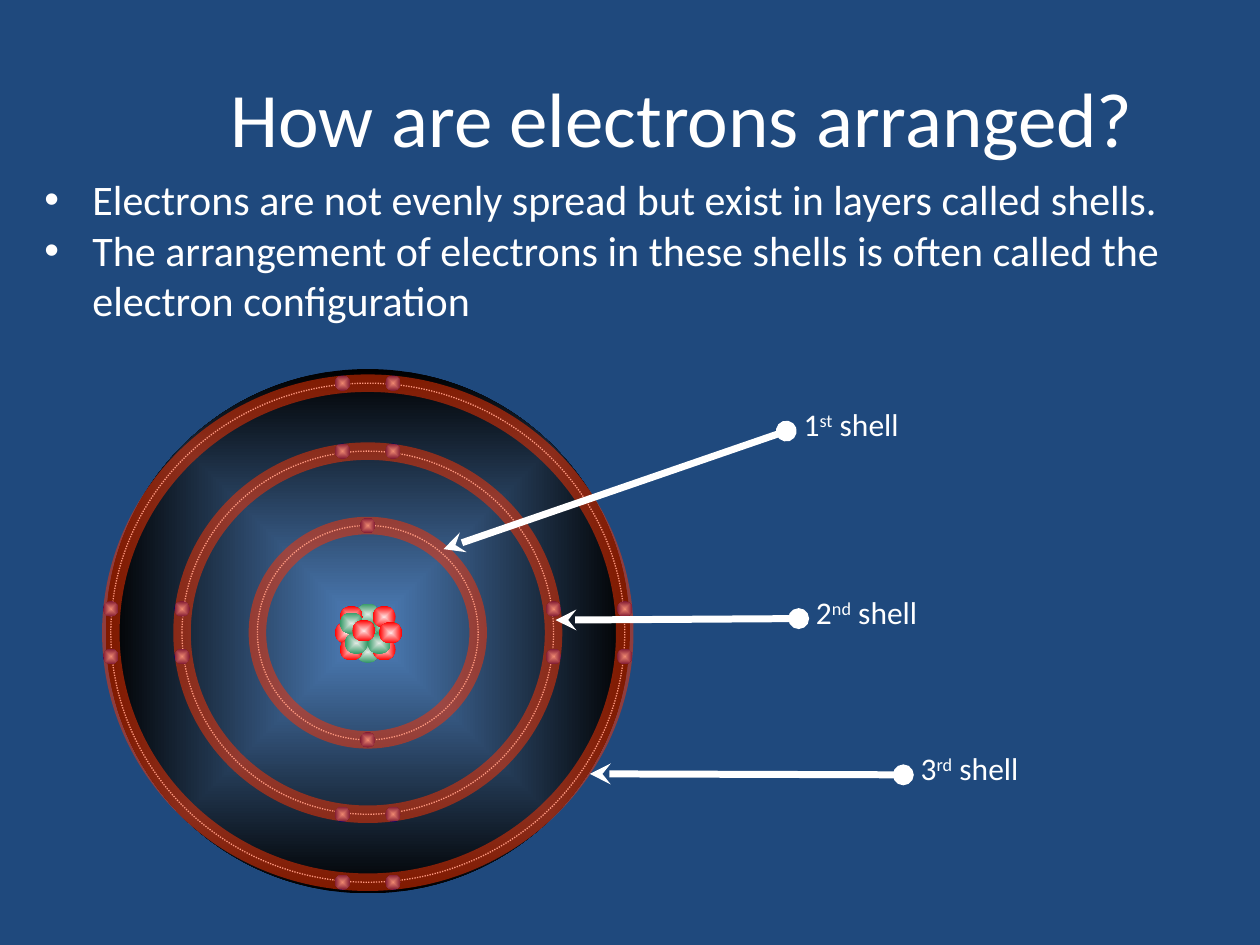
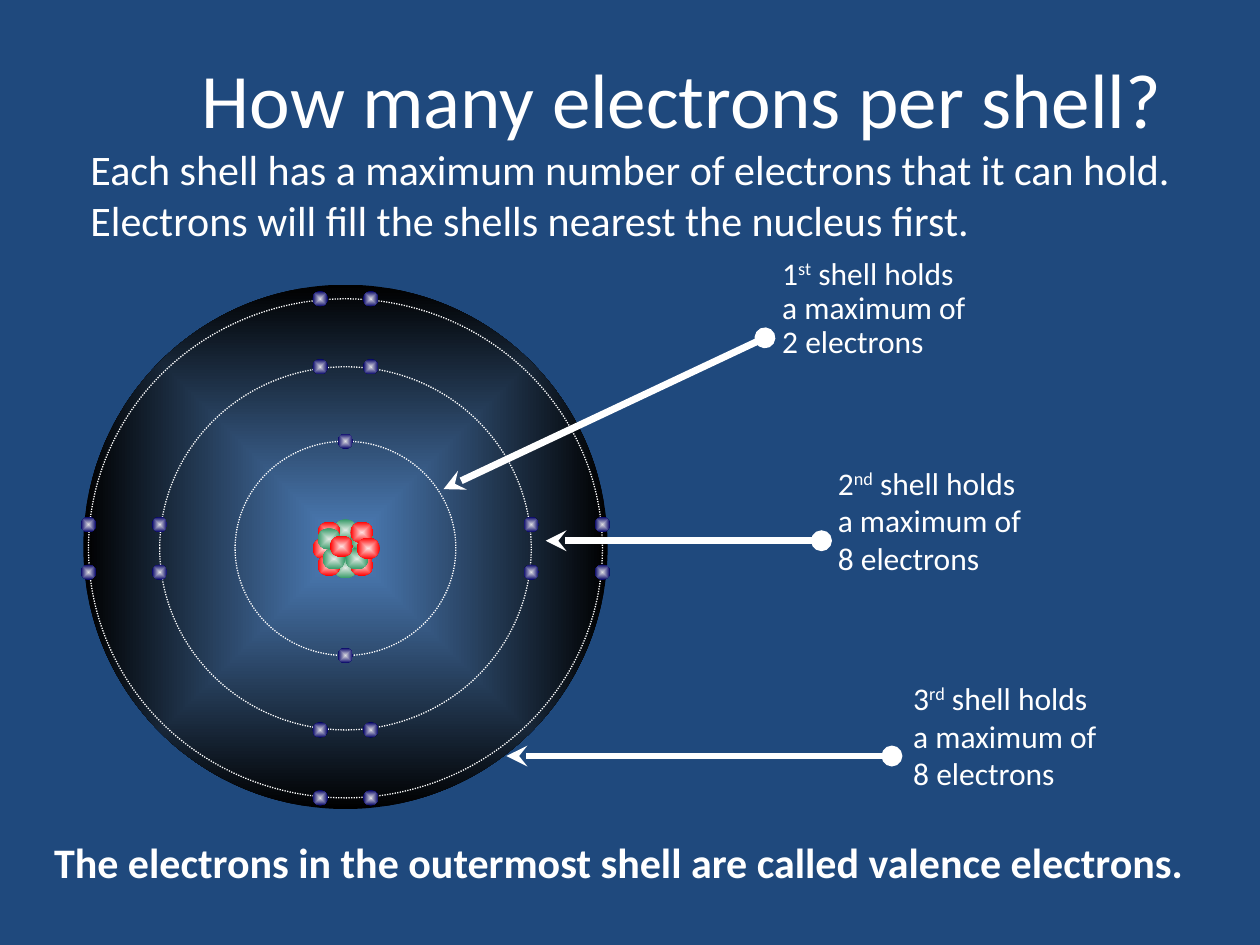
from dataclasses import dataclass
from itertools import product

from pptx import Presentation
from pptx.dml.color import RGBColor
from pptx.enum import dml, shapes, text
from pptx.oxml import ns, parse_xml
from pptx.util import Cm, Pt


@dataclass(frozen=True)
class Theme:
    font: str = "Calibri"
    background: str = "1F497D"
    ink: str = "FFFFFF"
    highlight: str = "FF3300"
    # Gradients run from the centre to the edge
    disc: tuple = ("4F81BD", "000000")
    electron: tuple = ("DEDEE2", "010066")
    proton: tuple = ("FFDEDE", "FF0000")
    neutron: tuple = ("DFE9E2", "339966")
    title_size: int = 44
    body_size: int = 24
    label_size: int = 18
    orbit_width: float = 0.75
    highlight_width: int = 10
    arrow_width: int = 4


THEME = Theme()


@dataclass(frozen=True)
class Callout:
    """An arrow from start to tip, and the label box beside its start (cm)."""
    ordinal: str
    suffix: str
    lines: tuple
    box: tuple
    start: tuple
    tip: tuple
    line_spacing: float = 1.0


# Atom geometry in cm, relative to the centre of the shells
DISC_SIZE = 10.57
SHELL_SIZES = [(4.45, 4.32), (7.49, 7.32), (10.36, 10.06)]
ELECTRON_SIZE = 0.31
PAIR_OFFSET = (0.51, 0.48)
NUCLEON_SIZE = (0.46, 0.43)
NUCLEONS = [
    (THEME.neutron, 0, -0.37), (THEME.proton, -0.43, 0),
    (THEME.neutron, 0, 0), (THEME.proton, -0.33, -0.32),
    (THEME.neutron, -0.33, -0.19), (THEME.neutron, 0, 0.39),
    (THEME.proton, -0.33, 0.34), (THEME.proton, 0.33, 0.34),
    (THEME.neutron, 0.23, 0.21), (THEME.neutron, 0.33, -0.19),
    (THEME.proton, 0.33, -0.32), (THEME.neutron, -0.23, 0.21),
    (THEME.proton, -0.08, -0.04), (THEME.proton, 0.46, 0),
]


# Shared helpers
def xml(tag, content="", **attributes):
    pairs = " ".join(f'{key}="{value}"' for key, value in attributes.items())
    return parse_xml(f'<a:{tag} {ns.nsdecls("a")} {pairs}>{content}</a:{tag}>')


def cm_box(box):
    return [Cm(length) for length in box]


def style_run(run, size, bold=False):
    run.font.name = THEME.font
    run.font.size = Pt(size)
    run.font.bold = bold
    run.font.color.rgb = RGBColor.from_string(THEME.ink)


def move(shape, box):
    shape.left, shape.top, shape.width, shape.height = cm_box(box)


def add_text_box(slide, box):
    text_frame = slide.shapes.add_textbox(*cm_box(box)).text_frame
    text_frame.word_wrap = True
    return text_frame


def add_ellipse(parent, centre, size):
    (x, y), (width, height) = centre, size
    shape = parent.shapes.add_shape(
        shapes.MSO_SHAPE.OVAL,
        *cm_box((x - width / 2, y - height / 2, width, height)))
    shape.shadow.inherit = False
    shape.fill.background()
    return shape


def add_ball(parent, centre, size, colours):
    shape = add_ellipse(parent, centre, size)
    shape.line.fill.background()
    stops = "".join(
        f'<a:gs pos="{position}"><a:srgbClr val="{colour}"/></a:gs>'
        for position, colour in zip((0, 100000), colours))
    gradient = xml(
        "gradFill",
        f'<a:gsLst>{stops}</a:gsLst><a:path path="shape">'
        '<a:fillToRect l="50000" t="50000" r="50000" b="50000"/></a:path>',
        rotWithShape=1)
    properties = shape._element.spPr
    properties.replace(properties.find(ns.qn("a:noFill")), gradient)


def add_ring(parent, centre, size, colour, width):
    line = add_ellipse(parent, centre, size).line
    line.color.rgb = RGBColor.from_string(colour)
    line.width = Pt(width)
    return line


# Title and body
def fill_title(slide, wording, box):
    title = slide.shapes.title
    move(title, box)
    text_frame = title.text_frame
    text_frame.text = wording
    text_frame.margin_left = Cm(2.36)
    text_frame.vertical_anchor = text.MSO_ANCHOR.MIDDLE
    text_frame.auto_size = text.MSO_AUTO_SIZE.NONE
    paragraph = text_frame.paragraphs[0]
    paragraph.alignment = text.PP_ALIGN.CENTER
    style_run(paragraph.runs[0], THEME.title_size)


def fill_body(slide, wordings, box, bulleted):
    body = slide.placeholders[1]
    move(body, box)
    text_frame = body.text_frame
    text_frame.text = "\n".join(wordings)
    text_frame.auto_size = text.MSO_AUTO_SIZE.NONE
    indent = Cm(0.97) if bulleted else 0
    for paragraph in text_frame.paragraphs:
        paragraph.space_before = Pt(0)
        properties = paragraph._p.get_or_add_pPr()
        properties.set("marL", str(indent))
        properties.set("indent", str(-indent))
        properties.append(xml("buChar", char="•") if bulleted else xml("buNone"))
        style_run(paragraph.runs[0], THEME.body_size)


# Atom
def electron_places(shell, size):
    half_width, half_height = size[0] / 2, size[1] / 2
    if shell == 0:
        return [(0, -half_height), (0, half_height)]
    gap_x, gap_y = PAIR_OFFSET
    signs = list(product((-1, 1), repeat=2))
    return ([(x * gap_x, y * half_height) for x, y in signs]
            + [(x * half_width, y * gap_y) for x, y in signs])


def add_atom(slide, left, top, highlighted=False):
    atom = slide.shapes.add_group_shape()
    x, y = left + DISC_SIZE / 2, top + DISC_SIZE / 2
    add_ball(atom, (x, y), (DISC_SIZE, DISC_SIZE), THEME.disc)
    y += 0.03
    for colours, dx, dy in NUCLEONS:
        add_ball(atom, (x + dx, y + dy), NUCLEON_SIZE, colours)
    for shell, size in enumerate(SHELL_SIZES):
        orbit = add_ring(atom, (x, y), size, THEME.ink, THEME.orbit_width)
        orbit.dash_style = dml.MSO_LINE.ROUND_DOT
        for dx, dy in electron_places(shell, size):
            add_ball(atom, (x + dx, y + dy), (ELECTRON_SIZE, ELECTRON_SIZE),
                     THEME.electron)
    if highlighted:
        for size in reversed(SHELL_SIZES):
            band = add_ring(slide, (x, y), size, THEME.highlight,
                            THEME.highlight_width)
            colour = band._ln.find(".//" + ns.qn("a:srgbClr"))
            colour.append(xml("alpha", val=50000))


# Shell labels with arrows
def add_callout(slide, callout):
    arrow = slide.shapes.add_connector(
        shapes.MSO_CONNECTOR.STRAIGHT, *cm_box(callout.start + callout.tip))
    arrow.line.color.rgb = RGBColor.from_string(THEME.ink)
    arrow.line.width = Pt(THEME.arrow_width)
    arrow.line._ln.append(xml("headEnd", type="oval"))
    arrow.line._ln.append(xml("tailEnd", type="stealth"))
    arrow._element.spPr.append(xml("effectLst"))

    paragraph = add_text_box(slide, callout.box).paragraphs[0]
    paragraph.line_spacing = callout.line_spacing
    first, *others = callout.lines
    for wording in (callout.ordinal, callout.suffix, f" {first}"):
        paragraph.add_run().text = wording
    for wording in others:
        paragraph.add_line_break()
        paragraph.add_run().text = wording
    for run in paragraph.runs:
        style_run(run, THEME.label_size)
    paragraph.runs[1].font._element.set("baseline", "30000")


def add_statement(slide, wording, box):
    text_frame = add_text_box(slide, box)
    text_frame.text = wording
    style_run(text_frame.paragraphs[0].runs[0], THEME.body_size, bold=True)


# Slides
def add_slide(presentation, title, title_box, body, body_box, bulleted=False):
    slide = presentation.slides.add_slide(presentation.slide_layouts[1])
    fill_title(slide, title, title_box)
    fill_body(slide, body, body_box, bulleted)
    return slide


def add_arrangement_slide(presentation):
    slide = add_slide(
        presentation,
        "How are electrons arranged?", (1.27, 0.76, 22.86, 3.18),
        ["Electrons are not evenly spread but exist in layers called shells.",
         "The arrangement of electrons in these shells is often called the "
         "electron configuration"],
        (0.64, 3.38, 23.7, 4.37), bulleted=True)
    add_atom(slide, 2.13, 7.44, highlighted=True)
    for ordinal, suffix, start, tip in [
            ("3", "rd", (18.21, 15.62), (11.89, 15.6)),
            ("2", "nd", (16.1, 12.47), (11.2, 12.5)),
            ("1", "st", (15.85, 8.69), (8.94, 11.07))]:
        box = (start[0] + 0.1, start[1] - 0.64, 4.32, 1.27)
        add_callout(slide, Callout(ordinal, suffix, ("shell",), box, start, tip))


def add_capacity_slide(presentation):
    slide = add_slide(
        presentation,
        "How many electrons per shell?", (1.27, 0.76, 22.86, 2.41),
        ["Each shell has a maximum number of electrons that it can hold. "
         "Electrons will fill the shells nearest the nucleus first."],
        (1.57, 2.77, 22.63, 3.07))
    add_atom(slide, 1.68, 5.74)
    maximum = ("shell holds", "a maximum of")
    for callout in [
            Callout("3", "rd", (*maximum, "8 electrons"),
                    (18.16, 13.56, 6.55, 3.3), (17.98, 15.24), (10.21, 15.24)),
            Callout("2", "nd", (*maximum, "8 electrons"),
                    (16.64, 9.22, 7.14, 3.3), (16.56, 10.9), (11, 10.9)),
            Callout("1", "st", (*maximum, "2 electrons"),
                    (15.52, 5.08, 7.06, 3), (15.42, 6.81), (8.94, 9.86), 0.9)]:
        add_callout(slide, callout)
    add_statement(
        slide, "The electrons in the outermost shell are called valence electrons.",
        (0.84, 16.74, 23.85, 1.27))


def main():
    presentation = Presentation()
    presentation.slide_width, presentation.slide_height = Cm(25.4), Cm(19.05)
    background = presentation.slide_master.background.fill
    background.solid()
    background.fore_color.rgb = RGBColor.from_string(THEME.background)
    add_arrangement_slide(presentation)
    add_capacity_slide(presentation)
    presentation.save("out.pptx")


if __name__ == "__main__":
    main()
